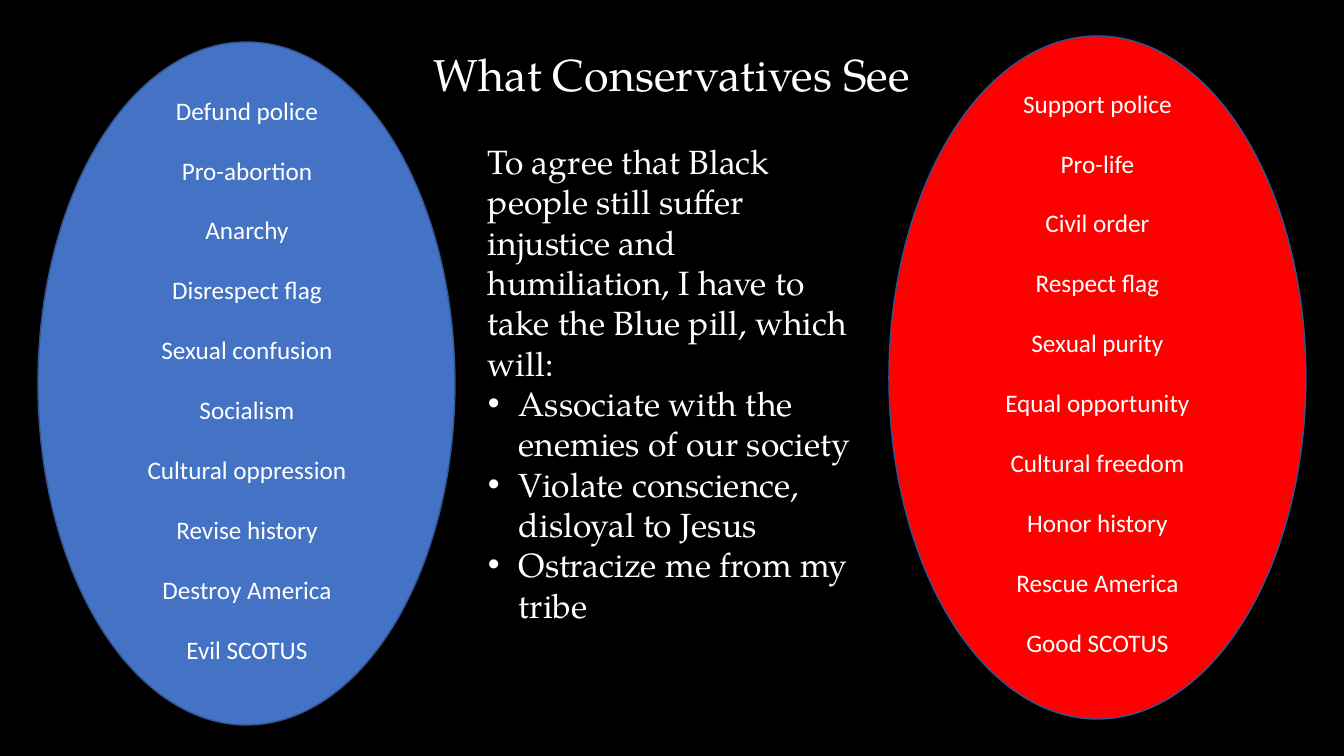
from lxml.etree import SubElement
from pptx import Presentation
from pptx.dml.color import RGBColor
from pptx.enum.shapes import MSO_SHAPE
from pptx.enum.text import MSO_AUTO_SIZE, PP_ALIGN
from pptx.oxml.ns import qn
from pptx.util import Emu, Pt

WIDTH, HEIGHT = 1344, 756
SCALE = 12192000 / WIDTH
SERIF, SANS = "TeX Gyre Pagella", "Calibri"
BLACK, WHITE, BLUE, RED, OUTLINE = "000000", "FFFFFF", "4472C4", "FF0000", "325491"
BULLET_INDENT = 31

BLUE_VIEWS = [
    "Defund police", "Pro-abortion", "Anarchy", "Disrespect flag", "Sexual confusion",
    "Socialism", "Cultural oppression", "Revise history", "Destroy America", "Evil SCOTUS",
]
RED_VIEWS = [
    "Support police", "Pro-life", "Civil order", "Respect flag", "Sexual purity",
    "Equal opportunity", "Cultural freedom", "Honor history", "Rescue America", "Good SCOTUS",
]
CLAIM = ("To agree that Black people still suffer injustice and humiliation, "
         "I have to take the Blue pill, which will:")
CONSEQUENCES = [
    "Associate with the enemies of our society",
    "Violate conscience, disloyal to Jesus",
    "Ostracize me from my tribe",
]


def px(length):
    return Emu(round(length * SCALE))


def color(value):
    return RGBColor.from_string(value)


class SlideBuilder:
    def __init__(self, page, text_color, line_color):
        self.page = page
        self.text_color = text_color
        self.line_color = line_color

    def background(self, fill):
        self.page.background.fill.solid()
        self.page.background.fill.fore_color.rgb = color(fill)

    def ellipse(self, left, top, width, height, fill):
        shape = self.page.shapes.add_shape(
            MSO_SHAPE.OVAL, px(left), px(top), px(width), px(height))
        shape.shadow.inherit = False
        shape.fill.solid()
        shape.fill.fore_color.rgb = color(fill)
        shape.line.color.rgb = color(self.line_color)
        shape.line.width = Pt(1)

    def text_box(self, left, top, width, height, wrap=False):
        box = self.page.shapes.add_textbox(px(left), px(top), px(width), px(height))
        box.text_frame.word_wrap = wrap
        box.text_frame.auto_size = MSO_AUTO_SIZE.SHAPE_TO_FIT_TEXT
        return box.text_frame

    def add_text(self, frame, text, font=SERIF, size=24, align=PP_ALIGN.LEFT,
                 space_before=0, bullet=False):
        """Fill the frame's first paragraph if it is empty, else add one."""
        para = frame.add_paragraph() if frame.text else frame.paragraphs[0]
        para.alignment = align
        para.space_before = Pt(space_before)
        if bullet:
            properties = para._p.get_or_add_pPr()
            properties.set("marL", str(px(BULLET_INDENT)))
            properties.set("indent", str(-px(BULLET_INDENT)))
            SubElement(properties, qn("a:buFont"), typeface="Arial")
            SubElement(properties, qn("a:buChar"), char="•")
        span = para.add_run()
        span.text = text
        span.font.name = font
        span.font.size = Pt(size)
        span.font.color.rgb = color(self.text_color)

    def spaced_list(self, left, top, width, height, items):
        frame = self.text_box(left, top, width, height)
        for index, item in enumerate(items):
            self.add_text(frame, item, font=SANS, size=18, align=PP_ALIGN.CENTER,
                          space_before=21.2 if index else 0)


def main():
    deck = Presentation()
    deck.slide_width, deck.slide_height = px(WIDTH), px(HEIGHT)
    builder = SlideBuilder(deck.slides.add_slide(deck.slide_layouts[6]), WHITE, OUTLINE)
    builder.background(BLACK)

    title = builder.text_box(421, 42, 502, 65)
    builder.add_text(title, "What Conservatives See", size=32, align=PP_ALIGN.CENTER)

    builder.ellipse(38, 42, 417, 683, BLUE)
    builder.ellipse(889, 36, 417, 683, RED)
    builder.spaced_list(136, 90, 222, 591, BLUE_VIEWS)
    builder.spaced_list(994, 83, 207, 591, RED_VIEWS)

    argument = builder.text_box(478, 136, 389, 499, wrap=True)
    builder.add_text(argument, CLAIM)
    for consequence in CONSEQUENCES:
        builder.add_text(argument, consequence, bullet=True)

    deck.save("out.pptx")


if __name__ == "__main__":
    main()
